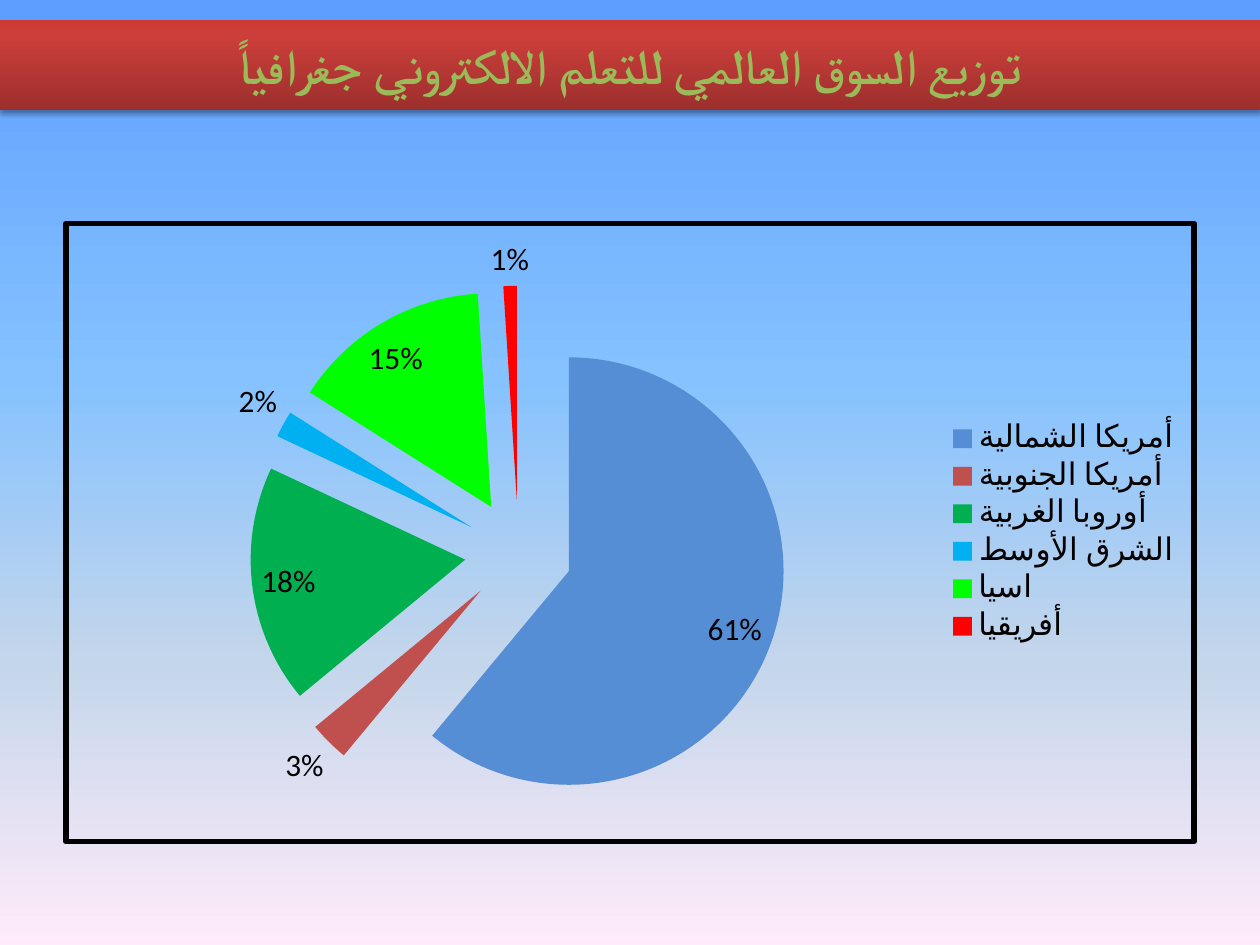
from lxml.etree import SubElement
from pptx import Presentation
from pptx.chart.data import CategoryChartData
from pptx.dml.color import RGBColor
from pptx.enum.chart import XL_CHART_TYPE, XL_LABEL_POSITION, XL_LEGEND_POSITION
from pptx.enum.text import MSO_ANCHOR, PP_ALIGN
from pptx.oxml import parse_xml
from pptx.oxml.ns import nsdecls, qn
from pptx.util import Cm, Pt

COLORS = {
    "title": "9BBB59", "edge": "FEFEFE", "text": "000000", "border": "000000",
    "north": "558ED5", "south": "C0504D", "europe": "00B050",
    "mideast": "00B0F0", "asia": "00FF00", "africa": "FF0000",
}
SKY = [(0, "5E9EFF"), (40, "85C2FF"), (70, "C4D6EB"), (100, "FFEBFA")]
BAND = [(0, "9C2F2D"), (80, "CB3E3A"), (100, "CE3B37")]
SHARES = [
    ("أمريكا الشمالية", 61, "north"),
    ("أمريكا الجنوبية", 3, "south"),
    ("أوروبا الغربية", 18, "europe"),
    ("الشرق الأوسط", 2, "mideast"),
    ("اسيا", 15, "asia"),
    ("أفريقيا", 1, "africa"),
]


def color(name):
    return RGBColor.from_string(COLORS[name])


def blend(fill, root, stops, angle):
    """Give the fill under root a gradient; the angle runs counterclockwise."""
    fill.gradient()
    fill.gradient_angle = angle
    rows = root.find(".//" + qn("a:gsLst"))
    rows.clear()
    for pos, tint in stops:
        stop = SubElement(rows, qn("a:gs"), pos=str(pos * 1000))
        SubElement(stop, qn("a:srgbClr"), val=tint)


def line_xml(tag, name, width):
    return (f'<{tag} w="{Pt(width)}"><a:solidFill>'
            f'<a:srgbClr val="{COLORS[name]}"/></a:solidFill><a:round/></{tag}>')


def write(frame, text, size, font, script, tint, bold=False, edge=None):
    """Put one centred right-to-left line in the frame; script is the Arabic font."""
    frame.word_wrap = True
    frame.vertical_anchor = MSO_ANCHOR.MIDDLE
    para = frame.paragraphs[0]
    para.alignment = PP_ALIGN.CENTER
    para._p.get_or_add_pPr().set("rtl", "1")
    run = para.add_run()
    run.text = text
    run.font.size, run.font.bold, run.font.name = Pt(size), bold, font
    run.font.color.rgb = color(tint)
    props = run._r.get_or_add_rPr()
    SubElement(props, qn("a:cs"), typeface=script)
    if edge:
        ln = line_xml("a:ln", edge, 1.5).replace("<a:ln", f"<a:ln {nsdecls('a')}", 1)
        props.insert(0, parse_xml(ln))


def add_shade(shape):
    shape.shadow.inherit = False
    effects = shape.element.spPr.find(qn("a:effectLst"))
    shade = SubElement(effects, qn("a:outerShdw"), blurRad=str(Pt(3.1)),
                       dist=str(Pt(1.8)), dir="5400000", rotWithShape="0")
    tint = SubElement(shade, qn("a:srgbClr"), val="000000")
    SubElement(tint, qn("a:alpha"), val="35000")


def add_title(slide):
    title = slide.shapes.title
    title.left, title.top = Cm(0), Cm(0.4)
    title.width, title.height = Cm(25.4), Cm(1.82)
    blend(title.fill, title.element, BAND, 90)
    add_shade(title)
    write(title.text_frame, "توزيع السوق العالمي للتعلم الالكتروني جغرافياً",
          size=28, font="Courier New", script="Calibri", tint="title",
          bold=True, edge="edge")


def add_pie(slide):
    data = CategoryChartData()
    data.categories = [name for name, _, _ in SHARES]
    data.add_series("Series 1", [share for _, share, _ in SHARES])
    chart = slide.shapes.add_chart(XL_CHART_TYPE.PIE, Cm(1.27), Cm(4.45),
                                   Cm(22.86), Cm(12.57), data).chart
    chart.has_title = False
    chart.font.size, chart.font.name = Pt(18), "Calibri"
    chart.font.color.rgb = color("text")
    chart.has_legend = True
    chart.legend.position = XL_LEGEND_POSITION.RIGHT
    chart.legend.include_in_layout = False

    plot = chart.plots[0]
    plot.vary_by_categories = True
    plot.has_data_labels = True
    labels = plot.data_labels
    labels.show_percentage, labels.show_value = True, False
    labels.number_format, labels.number_format_is_linked = "0%", False
    labels.position = XL_LABEL_POSITION.BEST_FIT

    series = plot.series[0]
    series._element.find(qn("c:tx")).addnext(
        parse_xml(f'<c:explosion {nsdecls("c")} val="25"/>'))
    for i, (_, _, tint) in enumerate(SHARES):
        fill = series.points[i].format.fill
        fill.solid()
        fill.fore_color.rgb = color(tint)

    chart._chartSpace.find(qn("c:chart")).addnext(parse_xml(
        f'<c:spPr {nsdecls("c", "a")}><a:noFill/>'
        f'{line_xml("a:ln", "border", 3.25)}</c:spPr>'))


def main():
    deck = Presentation()
    deck.slide_width, deck.slide_height = Cm(25.4), Cm(19.05)
    slide = deck.slides.add_slide(deck.slide_layouts[5])
    blend(slide.background.fill, slide.element, SKY, 270)
    add_title(slide)
    add_pie(slide)
    deck.save("out.pptx")


if __name__ == "__main__":
    main()
